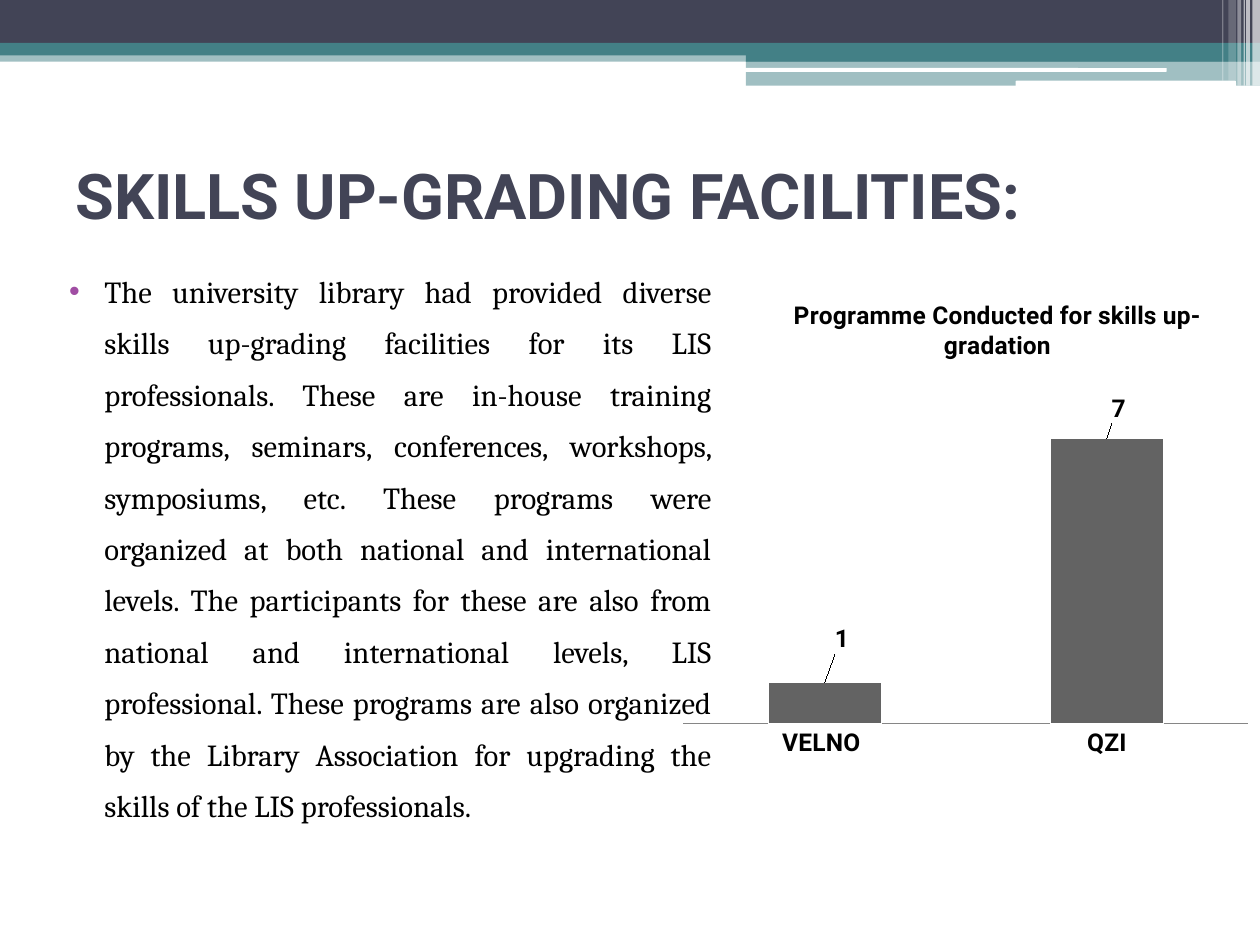
import pptx
import pptx.util
import pptx.dml.color
import pptx.enum.shapes
import pptx.enum.text
import pptx.enum.chart
import pptx.chart.data
import pptx.oxml
import pptx.oxml.ns
from lxml import etree

Inches = pptx.util.Inches
Pt = pptx.util.Pt
RGBColor = pptx.dml.color.RGBColor
qn = pptx.oxml.ns.qn

NAVY = RGBColor(0x42, 0x44, 0x56)
TEAL = RGBColor(0x43, 0x80, 0x86)
WHITE = RGBColor(0xFF, 0xFF, 0xFF)
BLACK = RGBColor(0x00, 0x00, 0x00)
PURPLE = RGBColor(0xA0, 0x4D, 0xA3)
BAR_GREY = RGBColor(0x63, 0x63, 0x63)
AXIS_GREY = RGBColor(0x86, 0x86, 0x86)


def set_font(font, name, size, color, bold=False):
    font.name = name
    font.size = Pt(size)
    font.color.rgb = color
    font.bold = bold


def make_layout(**values):
    layout = etree.Element(qn("c:layout"))
    manual = etree.SubElement(layout, qn("c:manualLayout"))
    for tag, value in values.items():
        etree.SubElement(manual, qn("c:" + tag)).set("val", str(value))
    return layout


prs = pptx.Presentation()
prs.slide_width = Inches(10)
prs.slide_height = Inches(7.5)
slide = prs.slides.add_slide(prs.slide_layouts[6])

RECT = pptx.enum.shapes.MSO_SHAPE.RECTANGLE
ROUNDED = pptx.enum.shapes.MSO_SHAPE.ROUNDED_RECTANGLE
banner = [
    (RECT, 0, 0.4, 10, 0.09, TEAL, 50),
    (RECT, 0, 0, 10, 0.34, NAVY, 100),
    (RECT, 0, 0.34, 10, 0.1, TEAL, 100),
    (RECT, 5.92, 0.39, 4.08, 0.1, TEAL, 100),
    (RECT, 5.92, 0.48, 4.08, 0.2, TEAL, 50),
    (ROUNDED, 5.91, 0.54, 3.35, 0.03, WHITE, 100),
    (ROUNDED, 8.06, 0.64, 1.75, 0.05, WHITE, 100),
    (RECT, 9.94, 0, 0.06, 0.68, WHITE, 65),
    (RECT, 9.89, 0, 0.03, 0.68, WHITE, 65),
    (RECT, 9.87, 0, 0.01, 0.68, WHITE, 60),
    (RECT, 9.82, 0, 0.03, 0.68, WHITE, 40),
    (RECT, 9.75, 0, 0.06, 0.64, WHITE, 20),
    (RECT, 9.7, 0, 0.01, 0.64, WHITE, 30),
]
for kind, left, top, width, height, color, opacity in banner:
    strip = slide.shapes.add_shape(
        kind, Inches(left), Inches(top), Inches(width), Inches(height))
    strip.shadow.inherit = False
    strip.fill.solid()
    strip.fill.fore_color.rgb = color
    strip.line.fill.background()
    if opacity < 100:
        srgb = strip.fill._xPr.find(".//" + qn("a:srgbClr"))
        etree.SubElement(srgb, qn("a:alpha")).set("val", str(opacity * 1000))

heading = slide.shapes.add_textbox(Inches(0.5), Inches(1.24), Inches(9), Inches(1.17))
heading.text_frame.word_wrap = True
heading.text_frame.margin_top = Inches(0)
heading_run = heading.text_frame.paragraphs[0].add_run()
heading_run.text = "SKILLS UP-GRADING FACILITIES:"
set_font(heading_run.font, "Roboto", 36, NAVY, True)

body = slide.shapes.add_textbox(Inches(0.33), Inches(2), Inches(5.42), Inches(5.19))
body.text_frame.word_wrap = True
facilities = body.text_frame.paragraphs[0]
facilities.alignment = pptx.enum.text.PP_ALIGN.JUSTIFY
facilities.line_spacing = 1.4
facilities.space_before = Pt(3)
facilities_run = facilities.add_run()
facilities_run.text = (
    "The university library had provided diverse skills up-grading facilities "
    "for its LIS professionals. These are in-house training programs, seminars, "
    "conferences, workshops, symposiums, etc. These programs were organized at "
    "both national and international levels. The participants for these are also "
    "from national and international levels, LIS professional. These programs are "
    "also organized by the Library Association for upgrading the skills of the "
    "LIS professionals. ")
set_font(facilities_run.font, "Cambria", 17.5, BLACK)
indent = facilities._p.get_or_add_pPr()
indent.set("marL", str(Inches(0.4)))
indent.set("indent", str(Inches(-0.28)))
bullet_color = etree.SubElement(indent, qn("a:buClr"))
etree.SubElement(bullet_color, qn("a:srgbClr")).set("val", str(PURPLE))
etree.SubElement(indent, qn("a:buFont")).set("typeface", "Arial")
etree.SubElement(indent, qn("a:buChar")).set("char", "•")

programmes = pptx.chart.data.CategoryChartData()
programmes.categories = ["VELNO ", "QZI"]
programmes.add_series("Series 1", (1, 7))
chart = slide.shapes.add_chart(
    pptx.enum.chart.XL_CHART_TYPE.COLUMN_CLUSTERED,
    Inches(5.33), Inches(2.33), Inches(4.67), Inches(3.75), programmes).chart
set_font(chart.font, "Cambria", 10, BLACK)
chart.has_legend = False

chart.has_title = True
chart_title_run = chart.chart_title.text_frame.paragraphs[0].add_run()
chart_title_run.text = "Programme Conducted for skills up-gradation"
set_font(chart_title_run.font, "Roboto", 14, BLACK, True)
title_xml = chart.chart_title._element
for stale in title_xml.findall(qn("c:layout")):
    title_xml.remove(stale)
title_xml.find(qn("c:tx")).addnext(
    make_layout(xMode="edge", yMode="edge", x=0.2, y=0))

plot_xml = chart._chartSpace.find(".//" + qn("c:plotArea"))
for stale in plot_xml.findall(qn("c:layout")):
    plot_xml.remove(stale)
plot_xml.insert(0, make_layout(
    layoutTarget="inner", xMode="edge", yMode="edge", x=0.02, y=0.22, w=0.96, h=0.69))

places = chart.category_axis
places.major_tick_mark = pptx.enum.chart.XL_TICK_MARK.NONE
places.format.line.color.rgb = AXIS_GREY
places.format.line.width = Pt(0.75)
set_font(places.tick_labels.font, "Roboto", 14, BLACK, True)
counts = chart.value_axis
counts.visible = False
counts.has_major_gridlines = False
counts.minimum_scale = 0
counts.maximum_scale = 8

columns = chart.plots[0]
columns.gap_width = 150
columns.vary_by_categories = False
conducted = columns.series[0]
conducted.format.fill.solid()
conducted.format.fill.fore_color.rgb = BAR_GREY
conducted.format.line.color.rgb = WHITE
conducted.data_labels.show_value = True
set_font(conducted.data_labels.font, "Roboto", 14, BLACK, True)
labels_xml = conducted.data_labels._element
for index, (shift_x, shift_y) in enumerate([(0.03, -0.05), (0.02, -0.02)]):
    label = conducted.points[index].data_label
    set_font(label.font, "Roboto", 14, BLACK, True)
    label.position = pptx.enum.chart.XL_LABEL_POSITION.OUTSIDE_END
    label_xml = labels_xml.findall(qn("c:dLbl"))[index]
    label_xml.find(qn("c:idx")).addnext(make_layout(x=shift_x, y=shift_y))

for leader_lines in labels_xml.findall(qn("c:showLeaderLines")):
    labels_xml.remove(leader_lines)
C15 = "http://schemas.microsoft.com/office/drawing/2012/chart"
extensions = etree.SubElement(labels_xml, qn("c:extLst"))
extension = etree.SubElement(extensions, qn("c:ext"), nsmap={"c15": C15})
extension.set("uri", "{CE6537A1-D6FC-4f65-9D91-7224C49458BB}")
etree.SubElement(extension, "{" + C15 + "}showLeaderLines").set("val", "0")

prs.save("out.pptx")
